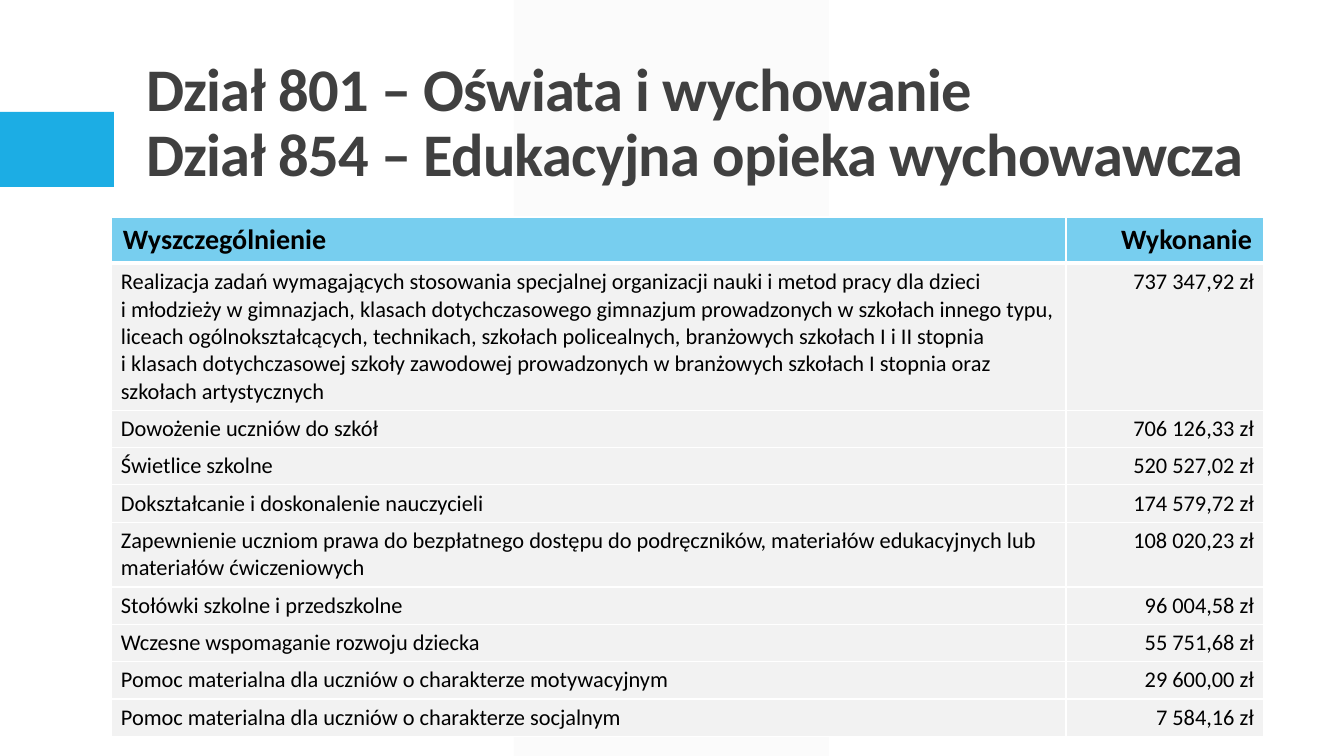
from lxml.etree import SubElement
from pptx import Presentation
from pptx.dml.color import RGBColor
from pptx.enum.shapes import MSO_SHAPE as Shape
from pptx.enum.text import MSO_ANCHOR as Anchor, MSO_AUTO_SIZE as AutoSize, PP_ALIGN as Align
from pptx.oxml.ns import qn
from pptx.util import Pt

TITLE = ["Dział 801 – Oświata i wychowanie", "Dział 854 – Edukacyjna opieka wychowawcza"]
HEADER = ("Wyszczególnienie", "Wykonanie")
EXPENSES = [
    ("Realizacja zadań wymagających stosowania specjalnej organizacji nauki i metod pracy dla dzieci \n"
     "i młodzieży w gimnazjach, klasach dotychczasowego gimnazjum prowadzonych w szkołach innego typu, "
     "liceach ogólnokształcących, technikach, szkołach policealnych, branżowych szkołach I i II stopnia \n"
     "i klasach dotychczasowej szkoły zawodowej prowadzonych w branżowych szkołach I stopnia oraz "
     "szkołach artystycznych", "737 347,92 zł"),
    ("Dowożenie uczniów do szkół", "706 126,33 zł"),
    ("Świetlice szkolne", "520 527,02 zł"),
    ("Dokształcanie i doskonalenie nauczycieli", "174 579,72 zł"),
    ("Zapewnienie uczniom prawa do bezpłatnego dostępu do podręczników, materiałów edukacyjnych "
     "lub materiałów ćwiczeniowych", "108 020,23 zł"),
    ("Stołówki szkolne i przedszkolne", "96 004,58 zł"),
    ("Wczesne wspomaganie rozwoju dziecka", "55 751,68 zł"),
    ("Pomoc materialna dla uczniów o charakterze motywacyjnym", "29 600,00 zł"),
    ("Pomoc materialna dla uczniów o charakterze socjalnym", "7 584,16 zł"),
]
LINE_COUNTS = {0: 5, 4: 2}
COLUMN_WIDTHS = (955, 198)
HEADER_HEIGHT, LINE_HEIGHT, ROW_PADDING = 46, 27, 10

FONT = "Calibri"
WHITE = RGBColor(0xFF, 0xFF, 0xFF)
BLACK = RGBColor(0, 0, 0)
DARK = RGBColor(0x40, 0x40, 0x40)
PALE = RGBColor(0xF2, 0xF2, 0xF2)
BLUE = RGBColor(0x1C, 0xAD, 0xE4)
SKY = RGBColor(0x77, 0xCE, 0xEF)


def px(length):
    """Turn pixels into EMU."""
    return round(length * 914400 / 100.8)


def add_lines(para, lines, size, bold, color):
    """Write lines as formatted runs with line breaks between them."""
    for index, line in enumerate(lines):
        if index:
            para.add_line_break()
        span = para.add_run()
        span.text = line
        font = span.font
        font.name, font.size, font.bold = FONT, Pt(size), bold
        font.color.rgb = color


def add_block(page, kind, place, color):
    """Add a plain filled shape."""
    block = page.shapes.add_shape(kind, *map(px, place))
    block.shadow.inherit = False
    block.fill.solid()
    block.fill.fore_color.rgb = color
    block.line.fill.background()
    return block


def add_backdrop(page):
    """Draw the translucent band and the blue tab."""
    band = add_block(page, Shape.PARALLELOGRAM, (514, 0, 315, 756), PALE)
    band.adjustments[0] = 0
    color = band.element.spPr.find(qn("a:solidFill"))[0]
    SubElement(color, qn("a:alpha"), val="30000")
    add_block(page, Shape.RECTANGLE, (0, 112, 114, 75), BLUE)


def set_title(page):
    """Place and format the title above the backdrop."""
    title = page.shapes.title
    title.element.getparent().append(title.element)
    title.left, title.top, title.width, title.height = map(px, (136, 42, 1153, 153))
    frame = title.text_frame
    frame.word_wrap = True
    frame.auto_size = AutoSize.NONE
    frame.vertical_anchor = Anchor.BOTTOM
    para = frame.paragraphs[0]
    para.alignment, para.line_spacing = Align.LEFT, 0.9
    add_lines(para, TITLE, 43.2, True, DARK)
    for span in para.runs:
        span.font._element.set("spc", "-50")


def set_borders(cell, row):
    """Give a cell white borders, thick under the header."""
    widths = {"L": 1, "R": 1, "T": 3 if row == 1 else 1, "B": 3 if row == 0 else 1}
    properties = cell._tc.get_or_add_tcPr()
    for side, width in widths.items():
        line = SubElement(properties, qn(f"a:ln{side}"), w=str(Pt(width)))
        SubElement(SubElement(line, qn("a:solidFill")), qn("a:srgbClr"), val=str(WHITE))


def fill_cell(cell, row, column, text):
    """Write and format one table cell."""
    is_header = row == 0
    set_borders(cell, row)
    cell.fill.solid()
    cell.fill.fore_color.rgb = SKY if is_header else PALE
    cell.margin_left = cell.margin_right = px(12 if is_header else 10)
    cell.margin_top = cell.margin_bottom = px(6 if is_header else 5)
    cell.vertical_anchor = Anchor.MIDDLE if is_header else Anchor.TOP
    para = cell.text_frame.paragraphs[0]
    para.alignment = Align.RIGHT if column else Align.LEFT
    add_lines(para, text.split("\n"), 20 if is_header else 16, is_header, BLACK)


def add_expenses(page):
    """Add the table of expenses."""
    rows = [HEADER, *EXPENSES]
    heights = [HEADER_HEIGHT]
    heights += [ROW_PADDING + LINE_HEIGHT * LINE_COUNTS.get(index, 1) for index in range(len(EXPENSES))]
    place = map(px, (111, 217, sum(COLUMN_WIDTHS), sum(heights)))
    table = page.shapes.add_table(len(rows), len(HEADER), *place).table
    for column, width in zip(table.columns, COLUMN_WIDTHS):
        column.width = px(width)
    for row, (texts, height) in enumerate(zip(rows, heights)):
        table.rows[row].height = px(height)
        for column, text in enumerate(texts):
            fill_cell(table.cell(row, column), row, column, text)


def main():
    """Build the slide and save the deck."""
    deck = Presentation()
    deck.slide_width, deck.slide_height = px(1344), px(756)
    page = deck.slides.add_slide(deck.slide_layouts[5])
    add_backdrop(page)
    set_title(page)
    add_expenses(page)
    deck.save("out.pptx")


if __name__ == "__main__":
    main()
